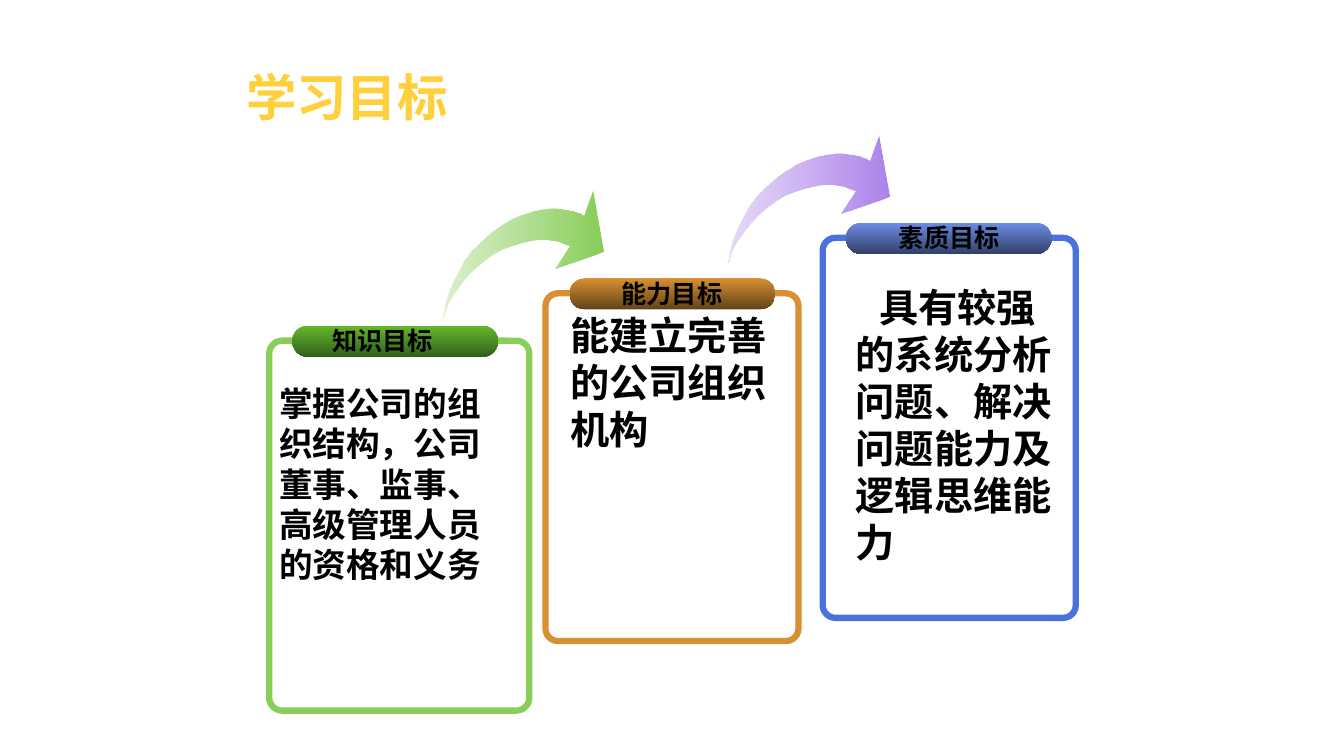
import pptx
import pptx.util
import pptx.dml.color
import pptx.enum.shapes
import pptx.enum.text
import pptx.oxml
import pptx.oxml.ns

PX = 9144
SLIDE = (1333, 750)
CJK_FONT = "Noto Sans CJK SC"

TITLE = {"text": "学习目标", "at": (234, 64, 866, 71)}
CARDS = [
    {"label": "知识目标", "label_at": (319, 318), "frame": (267, 338, 258, 367),
     "pill": (290, 323), "line": "88CE58", "shades": ("66B828", "2F611D"),
     "body": "掌握公司的组织结构，公司董事、监事、高级管理人员的资格和义务",
     "body_at": (267, 375, 227, 210), "size": 24, "indent": 0},
    {"label": "能力目标", "label_at": (606, 271), "frame": (541, 291, 251, 345),
     "pill": (565, 276), "line": "D79133", "shades": ("D79133", "634318"),
     "body": "能建立完善的公司组织机构",
     "body_at": (556, 304, 227, 150), "size": 28, "indent": 0},
    {"label": "素质目标", "label_at": (881, 216), "frame": (816, 236, 251, 377),
     "pill": (839, 221), "line": "4B71DD", "shades": ("6D8CE5", "32416A"),
     "body": "具有较强的系统分析问题、解决问题能力及逻辑思维能力",
     "body_at": (839, 276, 227, 337), "size": 28, "indent": 23},
]
PILL_SIZE = (204, 31)
LABEL_SIZE = (121, 40)
ARROWS = [
    {"tail": (439, 316), "shades": ("93D267", "88CE58")},
    {"tail": (722, 261), "shades": ("B48EED", "AD83EB")},
]
TAIL_OPACITY = 32
ARROW_OUTLINE = [
    (1, -1), (2, -3), (3, -7), (5, -13), (8, -19), (13, -26), (18, -33),
    (23, -40), (31, -48), (39, -55), (48, -62), (59, -68), (70, -72),
    (80, -75), (89, -77), (97, -78), (104, -78), (111, -77), (116, -76),
    (120, -74), (123, -73), (126, -72), (111, -49), (160, -66), (149, -127),
    (140, -102), (137, -104), (131, -106), (126, -107), (120, -108),
    (113, -109), (106, -109), (98, -108), (88, -106), (79, -103), (69, -99),
    (58, -92), (48, -85), (38, -76), (29, -67), (22, -58), (17, -48),
    (12, -39), (8, -30), (5, -22), (3, -15), (2, -9), (1, -4),
]


def emu(lengths):
    return [length * PX for length in lengths]


def colour(value):
    return pptx.dml.color.RGBColor.from_string(value)


def apply(target, values):
    for name, value in values.items():
        setattr(target, name, value)


def shade(box, shades, angle):
    box.shadow.inherit = False
    box.fill.gradient()
    box.fill.gradient_angle = angle
    for stop, value in zip(box.fill.gradient_stops, shades):
        stop.color.rgb = colour(value)
    box.line.fill.background()


def write(box, text, size, font, hue, frame_format, para_format):
    apply(box.text_frame, frame_format)
    para = box.text_frame.paragraphs[0]
    apply(para, para_format)
    span = para.add_run()
    span.text = text
    apply(span.font, {"size": pptx.util.Pt(size), "bold": True, "name": font})
    span.font.color.rgb = colour(hue)
    east_asian = pptx.oxml.parse_xml(
        f'<a:ea {pptx.oxml.ns.nsdecls("a")} typeface="{CJK_FONT}"/>')
    span.font._element.append(east_asian)
    return para


def add_rounded(page, at, corner):
    kind = pptx.enum.shapes.MSO_SHAPE.ROUNDED_RECTANGLE
    box = page.shapes.add_shape(kind, *emu(at))
    box.adjustments[0] = corner
    box.shadow.inherit = False
    return box


def add_card(page, card):
    frame = add_rounded(page, card["frame"], 0.05)
    frame.fill.background()
    frame.line.color.rgb = colour(card["line"])
    frame.line.width = pptx.util.Pt(4.5)
    pill = add_rounded(page, card["pill"] + PILL_SIZE, 0.5)
    shade(pill, card["shades"], 270)


def add_arrow(page, arrow):
    builder = page.shapes.build_freeform(0, 0, PX)
    builder.add_line_segments(ARROW_OUTLINE, close=True)
    box = builder.convert_to_shape(*emu(arrow["tail"]))
    shade(box, arrow["shades"], 0)
    first = next(box._element.spPr.iter(pptx.oxml.ns.qn("a:srgbClr")))
    first.append(pptx.oxml.parse_xml(
        f'<a:alpha {pptx.oxml.ns.nsdecls("a")} val="{TAIL_OPACITY * 1000}"/>'))


def add_text(page, card):
    align = pptx.enum.text.PP_ALIGN
    label = page.shapes.add_textbox(*emu(card["label_at"] + LABEL_SIZE))
    write(label, card["label"], 18, "Calibri", "000000",
          {"word_wrap": False}, {"alignment": align.CENTER})
    body = page.shapes.add_textbox(*emu(card["body_at"]))
    para = write(body, card["body"], card["size"], "Calibri", "000000",
                 {"word_wrap": True}, {"alignment": align.LEFT})
    para._p.get_or_add_pPr().set("indent", str(card["indent"] * PX))


def main():
    deck = pptx.Presentation()
    apply(deck, dict(zip(("slide_width", "slide_height"), emu(SLIDE))))
    page = deck.slides.add_slide(deck.slide_layouts[5])
    title = page.shapes.title
    apply(title, dict(zip(("left", "top", "width", "height"), emu(TITLE["at"]))))
    write(title, TITLE["text"], 36, CJK_FONT, "FFD03B",
          {"vertical_anchor": pptx.enum.text.MSO_ANCHOR.MIDDLE},
          {"alignment": pptx.enum.text.PP_ALIGN.LEFT, "line_spacing": 0.9})
    for add, items in ((add_card, CARDS), (add_arrow, ARROWS), (add_text, CARDS)):
        for item in items:
            add(page, item)
    deck.save("out.pptx")


if __name__ == "__main__":
    main()
